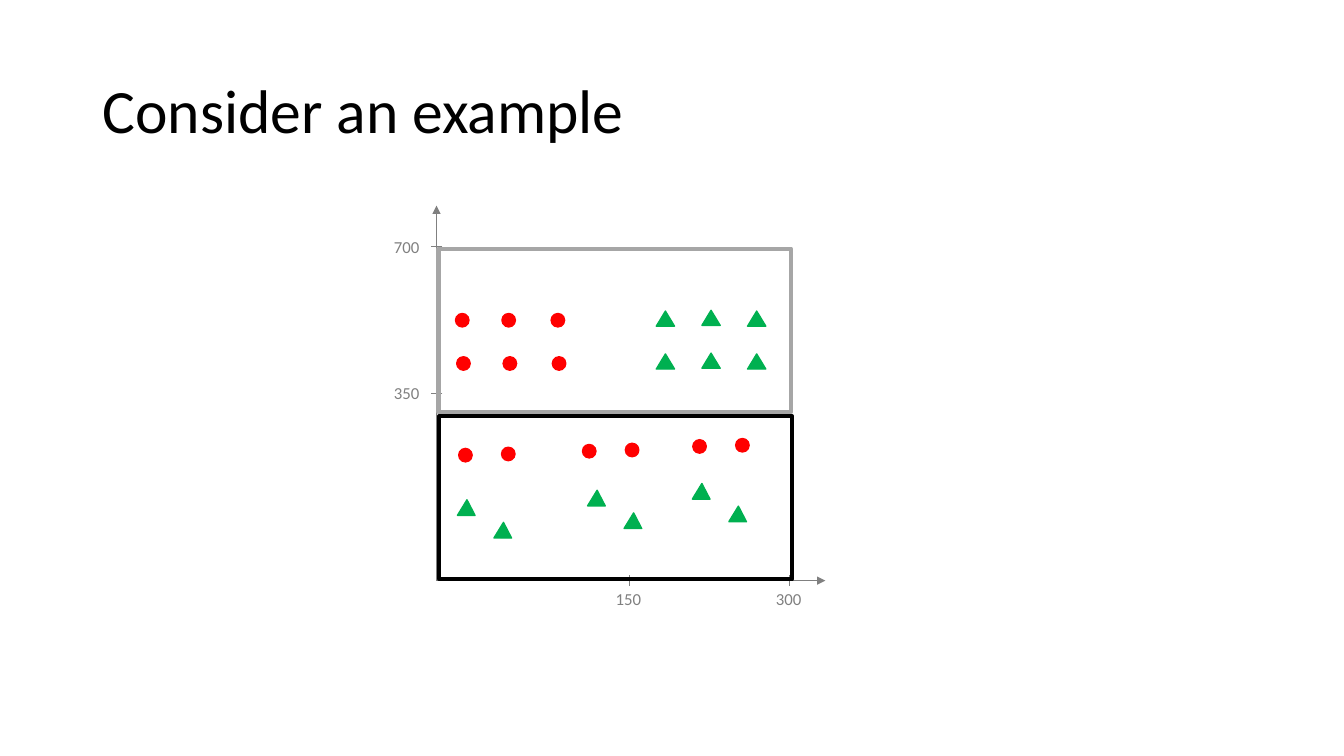
"""Build the slide with two groups of dots and triangles on a pair of axes."""
from dataclasses import dataclass

from lxml.etree import SubElement
from pptx import Presentation
from pptx.dml.color import RGBColor
from pptx.enum.shapes import MSO_CONNECTOR, MSO_SHAPE
from pptx.enum.text import MSO_ANCHOR, MSO_AUTO_SIZE, PP_ALIGN
from pptx.oxml.ns import qn
from pptx.slide import Slide
from pptx.util import Cm, Pt


@dataclass(frozen=True)
class Theme:
    font: str = "Calibri"
    title_size: Pt = Pt(44)
    label_size: Pt = Pt(12)
    axis_width: Pt = Pt(0.5)
    marker_width: Pt = Pt(1)
    frame_width: Pt = Pt(3)
    ink: RGBColor = RGBColor(0x00, 0x00, 0x00)
    axis: RGBColor = RGBColor(0x80, 0x80, 0x80)
    upper_frame: RGBColor = RGBColor(0xA6, 0xA6, 0xA6)
    red: RGBColor = RGBColor(0xFF, 0x00, 0x00)
    green: RGBColor = RGBColor(0x00, 0xB0, 0x50)


@dataclass(frozen=True)
class Marker:
    preset: MSO_SHAPE
    width: float
    height: float
    color: RGBColor
    rotation: float = 0


@dataclass(frozen=True)
class Tick:
    value: str
    position: float


@dataclass(frozen=True)
class Frame:
    left: float
    top: float
    color: RGBColor


THEME = Theme()
ORIGIN_X, ORIGIN_Y = 11.0, 14.63
AXIS_TOP, AXIS_RIGHT = 5.18, 20.8
LABEL_WIDTH, LABEL_HEIGHT = 1.17, 0.76
FRAME_WIDTH, FRAME_HEIGHT = 8.89, 4.11

X_TICKS = [Tick("300", 19.89), Tick("150", 15.85)]
Y_TICKS = [Tick("700", 6.22), Tick("350", 9.91)]
FRAMES = [Frame(11.07, 10.49, THEME.ink), Frame(11.05, 6.27, THEME.upper_frame)]

DOT = Marker(MSO_SHAPE.OVAL, 0.34, 0.34, THEME.red)
TRIANGLE = Marker(MSO_SHAPE.ISOSCELES_TRIANGLE, 0.46, 0.38, THEME.green)
TURNED_TRIANGLE = Marker(MSO_SHAPE.ISOSCELES_TRIANGLE, 0.46, 0.38, THEME.green, 121.5)

Point = tuple[float, float]
SERIES: list[tuple[Marker, list[Point], Point]] = [
    (DOT, [(11.48, 7.9), (12.65, 7.9), (13.89, 7.9)], (0.03, 1.09)),
    (TRIANGLE, [(16.54, 7.84), (17.69, 7.82), (18.84, 7.84)], (0, 1.08)),
    (DOT, [(11.56, 11.3), (14.68, 11.2), (17.46, 11.08)], (1.08, -0.03)),
    (TURNED_TRIANGLE, [(11.58, 12.7), (14.86, 12.46), (17.5, 12.29)], (0.92, 0.57)),
]


def add_title(slide: Slide, wording: str) -> None:
    title = slide.shapes.title
    title.left, title.top, title.width, title.height = Cm(2.33), Cm(1.01), Cm(29.21), Cm(3.68)
    title.text = wording
    title.text_frame.auto_size = MSO_AUTO_SIZE.NONE
    title.text_frame.vertical_anchor = MSO_ANCHOR.MIDDLE
    heading = title.text_frame.paragraphs[0]
    heading.alignment = PP_ALIGN.LEFT
    heading.line_spacing = 0.9
    heading.font.name = THEME.font
    heading.font.size = THEME.title_size
    heading.font.color.rgb = THEME.ink


def add_line(slide: Slide, start: Point, end: Point, arrow: bool = False) -> None:
    stroke = slide.shapes.add_connector(
        MSO_CONNECTOR.STRAIGHT, Cm(start[0]), Cm(start[1]), Cm(end[0]), Cm(end[1]))
    stroke.line.color.rgb = THEME.axis
    stroke.line.width = THEME.axis_width
    if arrow:
        SubElement(stroke.line._get_or_add_ln(), qn("a:tailEnd"), type="triangle")
    SubElement(stroke._element.spPr, qn("a:effectLst"))


def add_label(slide: Slide, value: str, left: float, top: float) -> None:
    label = slide.shapes.add_textbox(Cm(left), Cm(top), Cm(LABEL_WIDTH), Cm(LABEL_HEIGHT))
    label.text_frame.word_wrap = False
    label.text_frame.text = value
    number = label.text_frame.paragraphs[0]
    number.font.name = THEME.font
    number.font.size = THEME.label_size
    number.font.color.rgb = THEME.axis


def add_axes(slide: Slide) -> None:
    origin = (ORIGIN_X, ORIGIN_Y)
    add_line(slide, origin, (ORIGIN_X, AXIS_TOP), arrow=True)
    add_line(slide, origin, (AXIS_RIGHT, ORIGIN_Y), arrow=True)
    for tick in X_TICKS:
        add_line(slide, (tick.position, ORIGIN_Y - 0.13), (tick.position, ORIGIN_Y + 0.13))
        add_label(slide, tick.value, tick.position - LABEL_WIDTH / 2, ORIGIN_Y + 0.08)
    for tick in Y_TICKS:
        add_line(slide, (ORIGIN_X + 0.15, tick.position), (ORIGIN_X - 0.15, tick.position))
        add_label(slide, tick.value, ORIGIN_X - 1.32, tick.position - LABEL_HEIGHT / 2)


def add_marker(slide: Slide, marker: Marker, left: float, top: float) -> None:
    point = slide.shapes.add_shape(
        marker.preset, Cm(left), Cm(top), Cm(marker.width), Cm(marker.height))
    point.rotation = marker.rotation
    point.shadow.inherit = False
    point.fill.solid()
    point.fill.fore_color.rgb = marker.color
    point.line.color.rgb = marker.color
    point.line.width = THEME.marker_width


def add_frame(slide: Slide, frame: Frame) -> None:
    border = slide.shapes.add_shape(
        MSO_SHAPE.RECTANGLE, Cm(frame.left), Cm(frame.top), Cm(FRAME_WIDTH), Cm(FRAME_HEIGHT))
    border.shadow.inherit = False
    border.fill.background()
    border.line.color.rgb = frame.color
    border.line.width = THEME.frame_width


def main() -> None:
    deck = Presentation()
    deck.slide_width, deck.slide_height = Cm(33.87), Cm(19.05)
    slide = deck.slides.add_slide(deck.slide_layouts.get_by_name("Title Only"))
    add_title(slide, "Consider an example")
    add_axes(slide)
    for marker, starts, (step_x, step_y) in SERIES:
        for left, top in starts:
            add_marker(slide, marker, left, top)
            add_marker(slide, marker, left + step_x, top + step_y)
    for frame in FRAMES:
        add_frame(slide, frame)
    deck.save("out.pptx")


if __name__ == "__main__":
    main()
